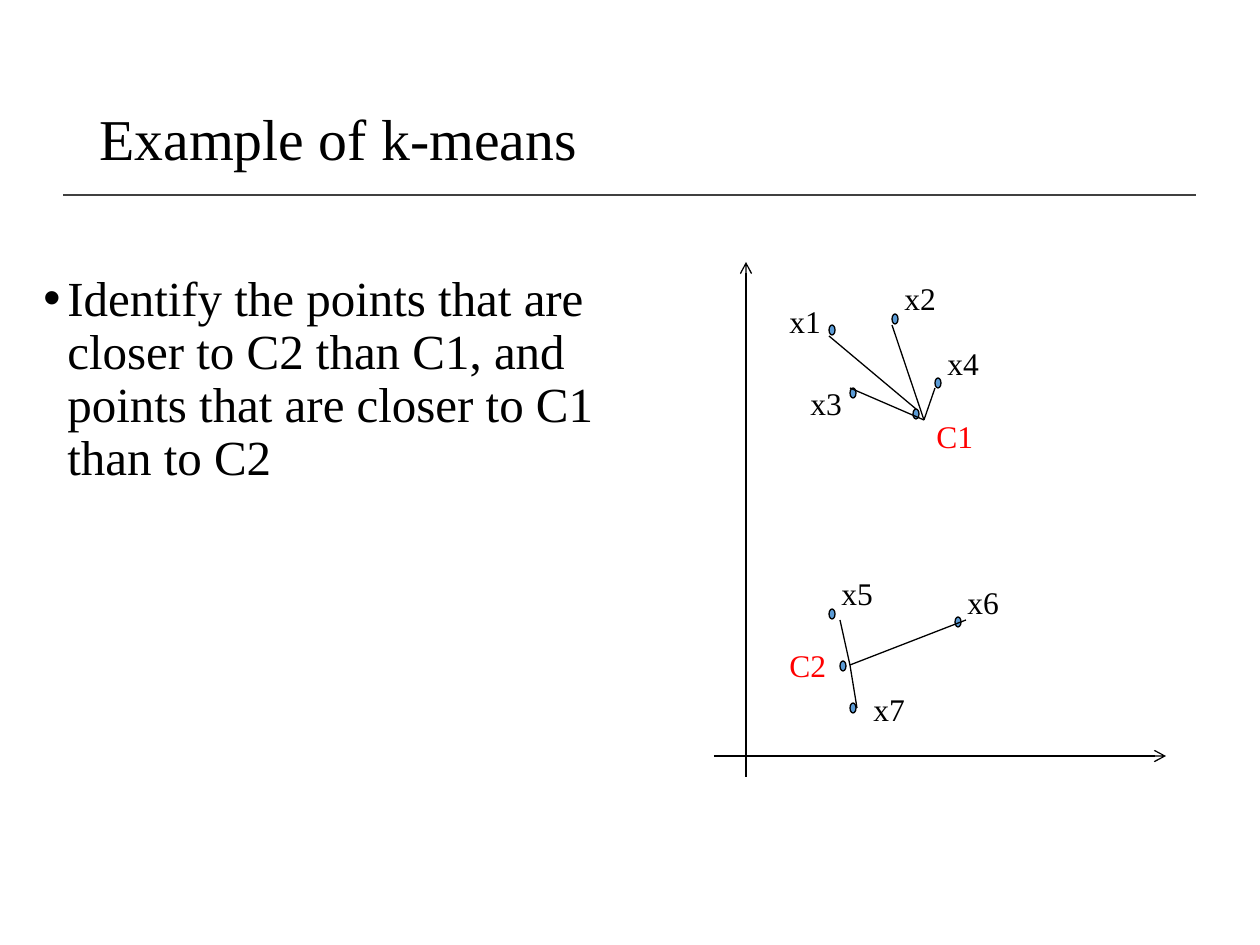
from pptx import Presentation
from pptx.dml.color import RGBColor
from pptx.enum.shapes import MSO_CONNECTOR as Connector, MSO_SHAPE as Shape
from pptx.enum.text import MSO_ANCHOR as Anchor
from pptx.oxml.ns import qn
from pptx.util import Emu, Pt
from lxml.etree import SubElement

PX = 914400 / 126
FONT = "Times New Roman"
COLORS = {"ink": "000000", "rule": "404040", "point": "5B9BD5", "centroid": "FF0000"}

# Content, all lengths in px
TITLE = "Example of k-means"
TASK = ("Identify the points that are closer to C2 than C1, "
        "and points that are closer to C1 than to C2")
# name, dot corner, label corner, colour of the label
POINTS = [
    ("x1", (829, 325), (777, 296), "ink"),
    ("x2", (892, 314), (892, 273), "ink"),
    ("x3", (850, 388), (798, 378), "ink"),
    ("x4", (935, 378), (935, 338), "ink"),
    ("x5", (829, 609), (829, 568), "ink"),
    ("x7", (850, 703), (861, 684), "ink"),
    ("x6", (955, 617), (955, 577), "ink"),
    ("C1", (913, 409), (924, 411), "centroid"),
    ("C2", (840, 661), (777, 640), "centroid"),
]
AXES = [((714, 756), (1166, 756)), ((746, 777), (746, 262))]
C1_END, C2_END = (924, 420), (850, 665)
MEMBER_LINES = [
    ((850, 388), C1_END),
    ((829, 336), (916, 409)),
    ((892, 325), C1_END),
    ((935, 388), C1_END),
    (C2_END, (840, 620)),
    (C2_END, (966, 620)),
    (C2_END, (857, 708)),
]
DOT_SIZE = (6, 10)
LABEL_SIZE = (73, 50)


def px(*lengths):
    return [Emu(round(length * PX)) for length in lengths]


def color(name):
    return RGBColor.from_string(COLORS[name])


def add_text(slide, text, corner, box_size, size=18, ink="ink", anchor=Anchor.TOP,
             spacing=None, before=None, bullet_indent=None):
    frame = slide.shapes.add_textbox(*px(*corner, *box_size)).text_frame
    frame.word_wrap = True
    frame.vertical_anchor = anchor
    paragraph = frame.paragraphs[0]
    if spacing:
        paragraph.line_spacing = spacing
    if before:
        paragraph.space_before = Pt(before)
    if bullet_indent:
        indent = px(bullet_indent)[0]
        properties = paragraph._p.get_or_add_pPr()
        properties.set("marL", str(indent))
        properties.set("indent", str(-indent))
        SubElement(properties, qn("a:buFont"), typeface="Arial")
        SubElement(properties, qn("a:buChar"), char="•")
    run = paragraph.add_run()
    run.text = text
    run.font.name = FONT
    run.font.size = Pt(size)
    run.font.color.rgb = color(ink)


def add_line(slide, start, end, ink="ink", width=0.75, arrow=False):
    connector = slide.shapes.add_connector(Connector.STRAIGHT, *px(*start, *end))
    connector.line.color.rgb = color(ink)
    connector.line.width = Pt(width)
    if arrow:
        SubElement(connector.line._get_or_add_ln(), qn("a:tailEnd"), type="arrow")
    SubElement(connector._element.spPr, qn("a:effectLst"))


def add_dot(slide, corner):
    dot = slide.shapes.add_shape(Shape.OVAL, *px(*corner, *DOT_SIZE))
    dot.shadow.inherit = False
    dot.fill.solid()
    dot.fill.fore_color.rgb = color("point")
    dot.line.color.rgb = color("ink")
    dot.line.width = Pt(0.75)


def main():
    deck = Presentation()
    deck.slide_width, deck.slide_height = px(1260, 945)
    slide = deck.slides.add_slide(deck.slide_layouts[6])

    # Title, rule and task
    add_line(slide, (63, 195), (1196, 195), ink="rule", width=1)
    add_text(slide, TITLE, (87, 50), (1086, 183), size=33, anchor=Anchor.MIDDLE, spacing=0.9)
    add_text(slide, TASK, (31, 268), (640, 330), size=28, spacing=0.9, before=7.5,
             bullet_indent=24)

    # Scatter of points and centroids
    for name, dot_corner, label_corner, ink in POINTS:
        add_dot(slide, dot_corner)
        add_text(slide, name, label_corner, LABEL_SIZE, ink=ink)

    # Axes, and lines from each point to its centroid
    for start, end in AXES:
        add_line(slide, start, end, arrow=True)
    for start, end in MEMBER_LINES:
        add_line(slide, start, end)

    deck.save("out.pptx")


if __name__ == "__main__":
    main()
